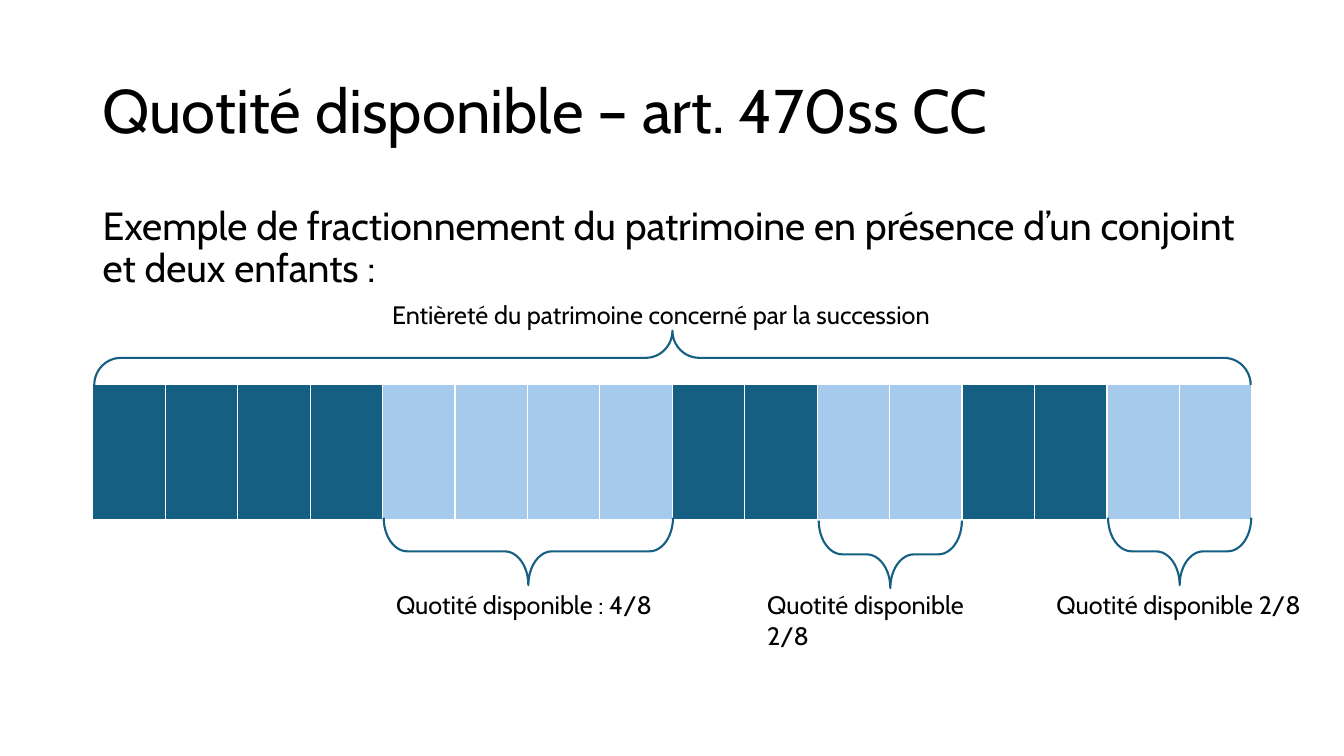
"""Build the slide on the disposable share of an estate."""
from lxml import etree
from pptx import Presentation
from pptx.dml.color import RGBColor
from pptx.enum.shapes import MSO_SHAPE
from pptx.enum.text import MSO_ANCHOR
from pptx.oxml.ns import qn
from pptx.util import Inches, Pt

TEAL = RGBColor(0x15, 0x60, 0x82)
SKY = RGBColor(0xA6, 0xCA, 0xEC)
BLACK = RGBColor(0, 0, 0)
WHITE = RGBColor(0xFF, 0xFF, 0xFF)

deck = Presentation()
deck.slide_width = Inches(13.33)
deck.slide_height = Inches(7.5)
page = deck.slides.add_slide(deck.slide_layouts[6])


def add_text(text, left, top, width, height, size, anchor=MSO_ANCHOR.TOP):
    box = page.shapes.add_textbox(Inches(left), Inches(top), Inches(width), Inches(height))
    box.text_frame.word_wrap = True
    box.text_frame.vertical_anchor = anchor
    para = box.text_frame.paragraphs[0]
    para.text = text
    para.font.name = "Cabin"
    para.font.size = Pt(size)
    para.font.color.rgb = BLACK
    return para


def add_brace(center_x, center_y, span, depth, rotation, curve):
    brace = page.shapes.add_shape(
        MSO_SHAPE.RIGHT_BRACE,
        Inches(center_x - depth / 2), Inches(center_y - span / 2), Inches(depth), Inches(span))
    brace.rotation = rotation
    brace.adjustments[0] = curve
    brace.adjustments[1] = 0.5
    brace.fill.background()
    brace.line.color.rgb = TEAL
    brace.line.width = Pt(1.5)
    brace.shadow.inherit = False


title = add_text("Quotité disponible – art. 470ss CC", 0.92, 0.4, 11.5, 1.45, 44, MSO_ANCHOR.MIDDLE)
title.line_spacing = 0.9
example = add_text(
    "Exemple de fractionnement du patrimoine en présence d’un conjoint et deux enfants :",
    0.92, 2, 11.5, 1, 28)
example.line_spacing = 0.9

part_colors = [TEAL] * 4 + [SKY] * 4 + ([TEAL] * 2 + [SKY] * 2) * 2
estate = page.shapes.add_table(
    1, len(part_colors), Inches(0.92), Inches(3.81), Inches(11.5), Inches(1.36)).table
for column, cell, color in zip(estate.columns, estate.rows[0].cells, part_colors):
    column.width = Inches(11.5 / len(part_colors))
    cell.fill.solid()
    cell.fill.fore_color.rgb = color
    properties = cell._tc.get_or_add_tcPr()
    for index, (side, width) in enumerate((("lnL", 1), ("lnR", 1), ("lnT", 1), ("lnB", 3))):
        border = etree.Element(qn(f"a:{side}"), w=str(Pt(width)))
        fill = etree.SubElement(border, qn("a:solidFill"))
        etree.SubElement(fill, qn("a:srgbClr"), val=str(WHITE))
        properties.insert(index, border)

add_brace(6.67, 3.55, 11.47, 0.54, 270, 0.49)
add_text("Entièreté du patrimoine concerné par la succession", 3.79, 2.92, 5.74, 0.4, 18)

shares = [
    ("Quotité disponible : 4/8", 3.83, 2.8, 5.24, 5.47, 2.87),
    ("Quotité disponible 2/8", 7.51, 2.61, 8.83, 5.5, 1.42),
    ("Quotité disponible 2/8", 10.38, 2.63, 11.7, 5.47, 1.42),
]
for label, left, width, center_x, center_y, span in shares:
    add_brace(center_x, center_y, span, 0.67, 90, 0.35)
    add_text(label, left, 5.8, width, 0.4, 18)

deck.save("out.pptx")
